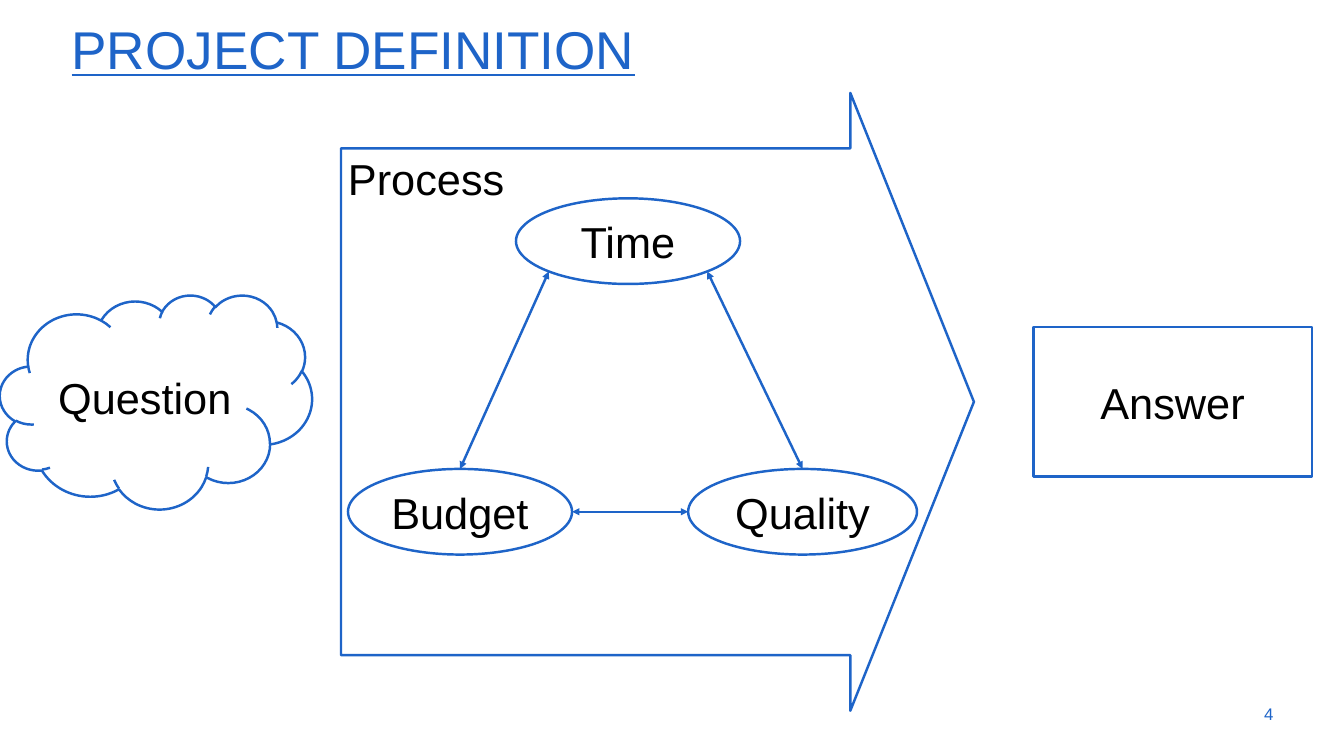
from math import cos, radians, sin

from lxml.etree import SubElement
from pptx import Presentation
from pptx.dml.color import RGBColor
from pptx.enum.shapes import MSO_CONNECTOR, MSO_SHAPE as Shape
from pptx.enum.text import MSO_ANCHOR as Anchor, MSO_AUTO_SIZE, PP_ALIGN as Align
from pptx.oxml.ns import qn
from pptx.util import Cm, Pt

BLUE = "1E64C8"
BLACK = "000000"


def color(hex_code):
    return RGBColor.from_string(hex_code)


def rim_point(ellipse, degrees):
    """Point on an ellipse, with angles running clockwise from the right."""
    angle = radians(degrees)
    x = ellipse.left + ellipse.width / 2 * (1 + cos(angle))
    y = ellipse.top + ellipse.height / 2 * (1 + sin(angle))
    return round(x), round(y)


class SlideBuilder:
    font_name = "Arial"
    line_width = Pt(2.5)

    def __init__(self, deck):
        self.slide = deck.slides.add_slide(deck.slide_layouts[5])

    def add_text(self, box, text, size, hex_code, align, anchor, underline=False):
        frame = box.text_frame
        frame.word_wrap = True
        frame.auto_size = MSO_AUTO_SIZE.NONE
        frame.vertical_anchor = anchor
        para = frame.paragraphs[0]
        para.alignment = align
        span = para.add_run()
        span.text = text
        font = span.font
        font.name, font.size, font.underline = self.font_name, Pt(size), underline
        font.color.rgb = color(hex_code)
        return para

    def title(self, text, left, top, width, height):
        box = self.slide.shapes.title
        box.left, box.top = Cm(left), Cm(top)
        box.width, box.height = Cm(width), Cm(height)
        para = self.add_text(box, text, 54, BLUE, Align.LEFT, Anchor.TOP, True)
        para.line_spacing = 0.9

    def page_number(self, text, left, top, width, height):
        box = self.slide.shapes.add_textbox(Cm(left), Cm(top), Cm(width), Cm(height))
        self.add_text(box, text, 17.1, BLUE, Align.RIGHT, Anchor.MIDDLE)

    def outline(self, kind, text, left, top, width, height,
                align=Align.CENTER, anchor=Anchor.MIDDLE):
        shape = self.slide.shapes.add_shape(
            kind, Cm(left), Cm(top), Cm(width), Cm(height))
        shape.shadow.inherit = False
        shape.fill.background()
        shape.line.color.rgb = color(BLUE)
        shape.line.width = self.line_width
        self.add_text(shape, text, 44, BLACK, align, anchor)
        return shape

    def double_arrow(self, start, end):
        arrow = self.slide.shapes.add_connector(MSO_CONNECTOR.STRAIGHT, *start, *end)
        arrow.line.color.rgb = color(BLUE)
        arrow.line.width = self.line_width
        properties = arrow.element.spPr
        line = properties.find(qn("a:ln"))
        for tag in ("a:headEnd", "a:tailEnd"):
            SubElement(line, qn(tag), type="triangle")
        SubElement(properties, qn("a:effectLst"))


def main():
    deck = Presentation()
    deck.slide_width, deck.slide_height = Cm(48.16), Cm(27.1)
    page = SlideBuilder(deck)

    # Heading and page number
    page.title("PROJECT DEFINITION", 2.31, 0.71, 43.64, 2.39)
    page.page_number("4", 43.31, 24.87, 2.57, 1.45)

    # From question through process to answer
    page.outline(Shape.CLOUD, "Question", 0, 10.57, 11.18, 7.67)
    page.outline(Shape.RECTANGLE, "Answer", 37.03, 11.73, 9.98, 5.36)
    process = page.outline(Shape.RIGHT_ARROW, "Process", 12.22, 3.33, 22.68, 22.15,
                           Align.LEFT, Anchor.TOP)
    process.adjustments[0] = 0.82
    process.adjustments[1] = 0.2

    # Triangle of constraints
    time = page.outline(Shape.OVAL, "Time", 18.49, 7.11, 8.03, 3.07)
    quality = page.outline(Shape.OVAL, "Quality", 24.66, 16.81, 8.2, 3.07)
    budget = page.outline(Shape.OVAL, "Budget", 12.47, 16.81, 8.03, 3.07)

    # Links between the constraints
    page.double_arrow(rim_point(budget, 270), rim_point(time, 135))
    page.double_arrow(rim_point(budget, 0), rim_point(quality, 180))
    page.double_arrow(rim_point(time, 45), rim_point(quality, 270))

    deck.save("out.pptx")


if __name__ == "__main__":
    main()
